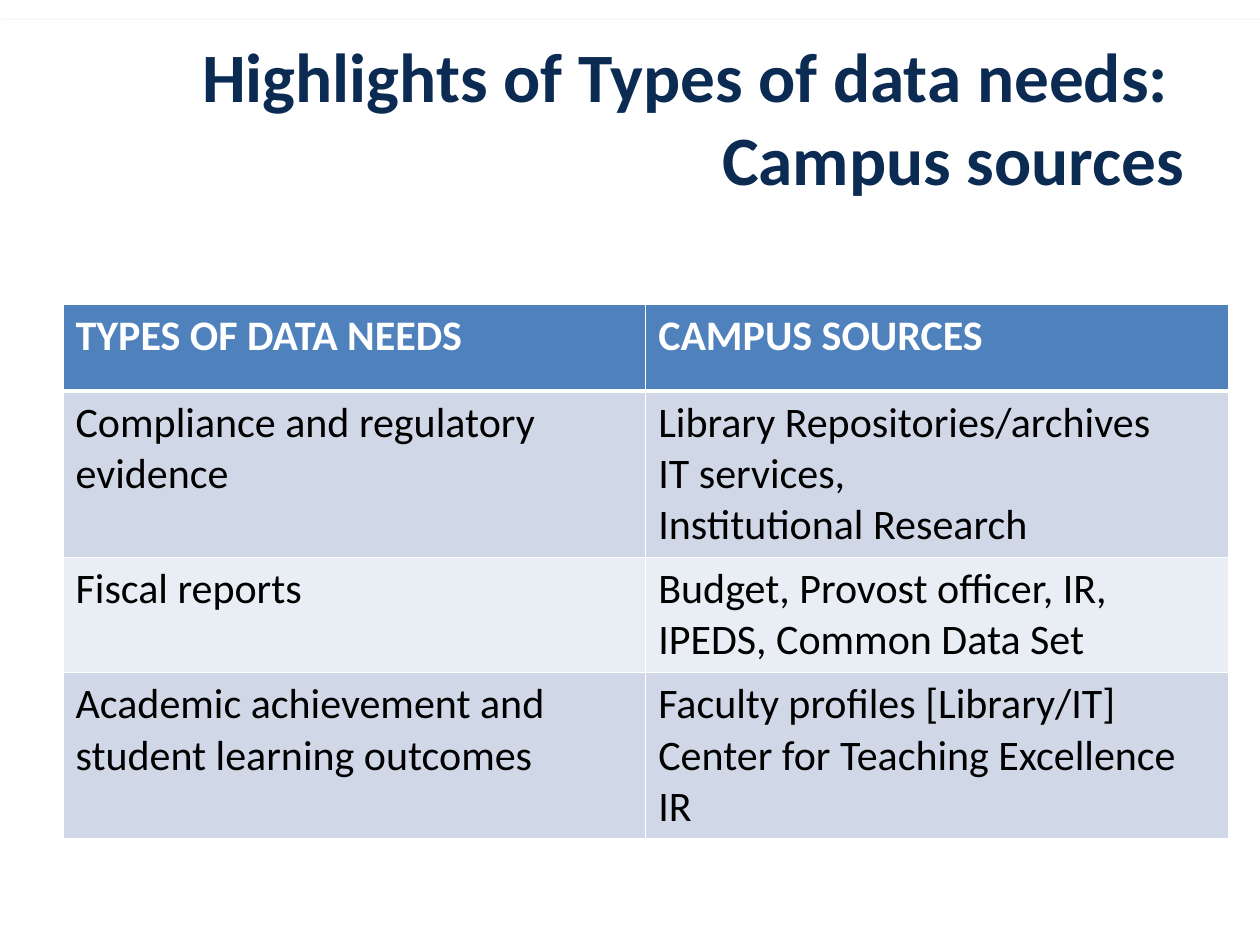
import lxml.etree
import pptx
import pptx.dml.color
import pptx.enum.shapes
import pptx.enum.text
import pptx.oxml
import pptx.oxml.ns
import pptx.util

Pt = pptx.util.Pt
RGBColor = pptx.dml.color.RGBColor
qn = pptx.oxml.ns.qn

WHITE = RGBColor(0xFF, 0xFF, 0xFF)
BLACK = RGBColor(0, 0, 0)
NAVY = RGBColor(0x0B, 0x2B, 0x53)
HEADER_BLUE = RGBColor(0x4F, 0x81, 0xBD)
BAND_COLORS = [RGBColor(0xD0, 0xD8, 0xE8), RGBColor(0xE9, 0xED, 0xF4)]
FONT_NAME = "Calibri"

ROWS = [
    ("TYPES OF DATA NEEDS", "CAMPUS SOURCES"),
    ("Compliance and regulatory evidence",
     "Library Repositories/archives\nIT services,\nInstitutional Research"),
    ("Fiscal reports", "Budget, Provost officer, IR, IPEDS, Common Data Set"),
    ("Academic achievement and student learning outcomes",
     "Faculty profiles [Library/IT]\nCenter for Teaching Excellence\nIR"),
]


def format_paragraph(paragraph, size, color, bold):
    font = paragraph.font
    font.name = FONT_NAME
    font.size = Pt(size)
    font.bold = bold
    font.color.rgb = color


def add_panel(slide, left, top, width, height):
    """Add the white backdrop, with its soft shadow, behind the title."""
    panel = slide.shapes.add_shape(
        pptx.enum.shapes.MSO_SHAPE.RECTANGLE, Pt(left), Pt(top), Pt(width), Pt(height))
    panel.fill.solid()
    panel.fill.fore_color.rgb = WHITE
    panel.line.color.rgb = WHITE
    panel.line.width = Pt(0.75)
    panel.shadow.inherit = False
    effects = panel.element.spPr.find(qn("a:effectLst"))
    shadow = lxml.etree.SubElement(
        effects, qn("a:outerShdw"), blurRad=str(Pt(3.1)), dist=str(Pt(1.8)),
        dir="5400000", rotWithShape="0")
    color = lxml.etree.SubElement(shadow, qn("a:srgbClr"), val=str(BLACK))
    lxml.etree.SubElement(color, qn("a:alpha"), val="35000")
    slide.shapes.title.element.addprevious(panel.element)


def place_title(slide, left, top, width, height):
    title = slide.shapes.title
    title.left, title.top, title.width, title.height = map(Pt, (left, top, width, height))
    frame = title.text_frame
    frame.text = "Highlights of Types of data needs: \vCampus sources"
    frame.word_wrap = True
    frame.vertical_anchor = pptx.enum.text.MSO_ANCHOR.MIDDLE
    paragraph = frame.paragraphs[0]
    paragraph.alignment = pptx.enum.text.PP_ALIGN.RIGHT
    format_paragraph(paragraph, 39.6, NAVY, True)


def set_borders(cell, bottom_width):
    properties = cell._tc.get_or_add_tcPr()
    widths = {"lnL": 1, "lnR": 1, "lnT": 1, "lnB": bottom_width}
    for position, (side, width) in enumerate(widths.items()):
        line = lxml.etree.Element(qn(f"a:{side}"), w=str(Pt(width)))
        fill = lxml.etree.SubElement(line, qn("a:solidFill"))
        lxml.etree.SubElement(fill, qn("a:srgbClr"), val=str(WHITE))
        properties.insert(position, line)


def add_sources_table(slide, left, top, width, row_height):
    table = slide.shapes.add_table(
        len(ROWS), len(ROWS[0]), Pt(left), Pt(top), Pt(width),
        Pt(row_height * len(ROWS))).table
    for row_index, texts in enumerate(ROWS):
        is_header = row_index == 0
        for column_index, text in enumerate(texts):
            cell = table.cell(row_index, column_index)
            cell.text = text
            cell.fill.solid()
            cell.fill.fore_color.rgb = (
                HEADER_BLUE if is_header else BAND_COLORS[(row_index - 1) % 2])
            # The rule under the header is thicker; both cells that share it agree.
            set_borders(cell, 3 if is_header else 1)
            if row_index == 1:
                cell._tc.tcPr.find(qn("a:lnT")).set("w", str(Pt(3)))
            for paragraph in cell.text_frame.paragraphs:
                format_paragraph(paragraph, 24, WHITE if is_header else BLACK, is_header)


def main():
    presentation = pptx.Presentation()
    presentation.slide_width, presentation.slide_height = Pt(720), Pt(540)
    slide = presentation.slides.add_slide(presentation.slide_layouts[5])
    add_panel(slide, 0, 12, 732, 540)
    place_title(slide, 36, 21.6, 648, 90)
    add_sources_table(slide, 36, 174, 666, 49.5)
    presentation.save("out.pptx")


if __name__ == "__main__":
    main()
